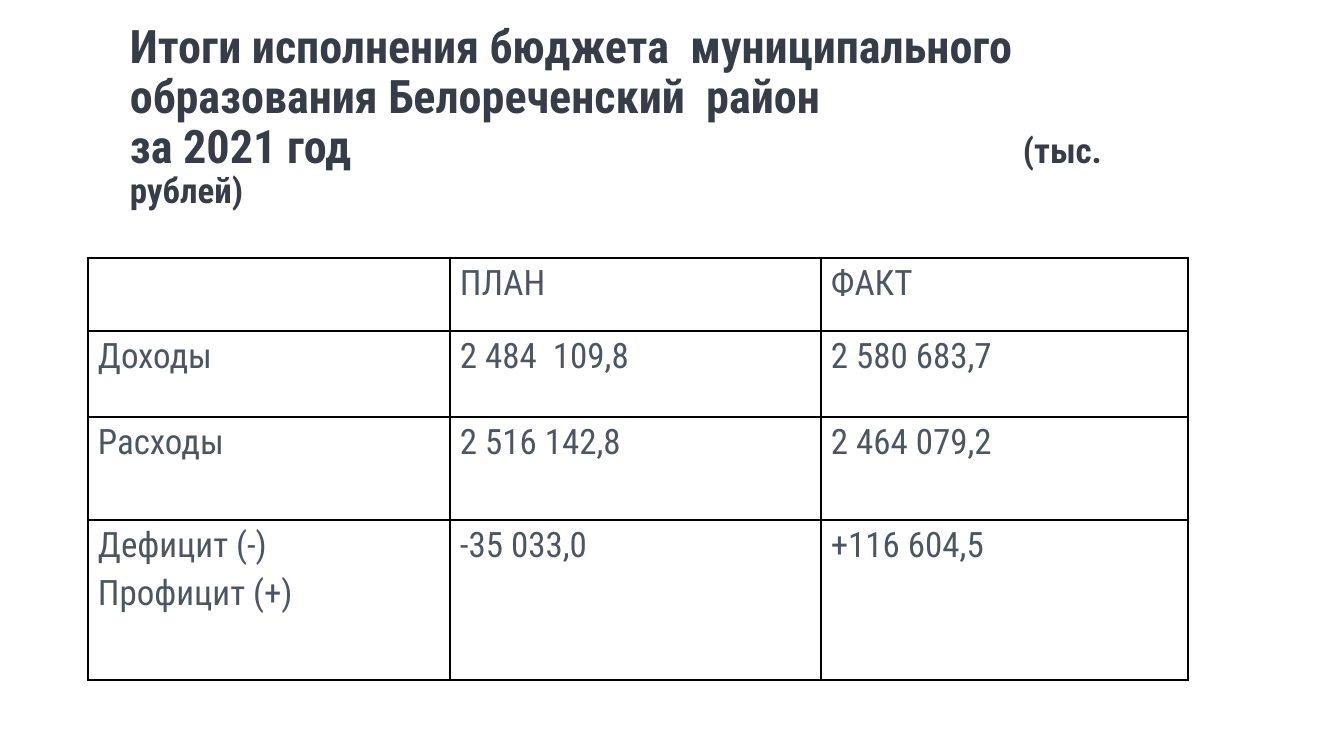
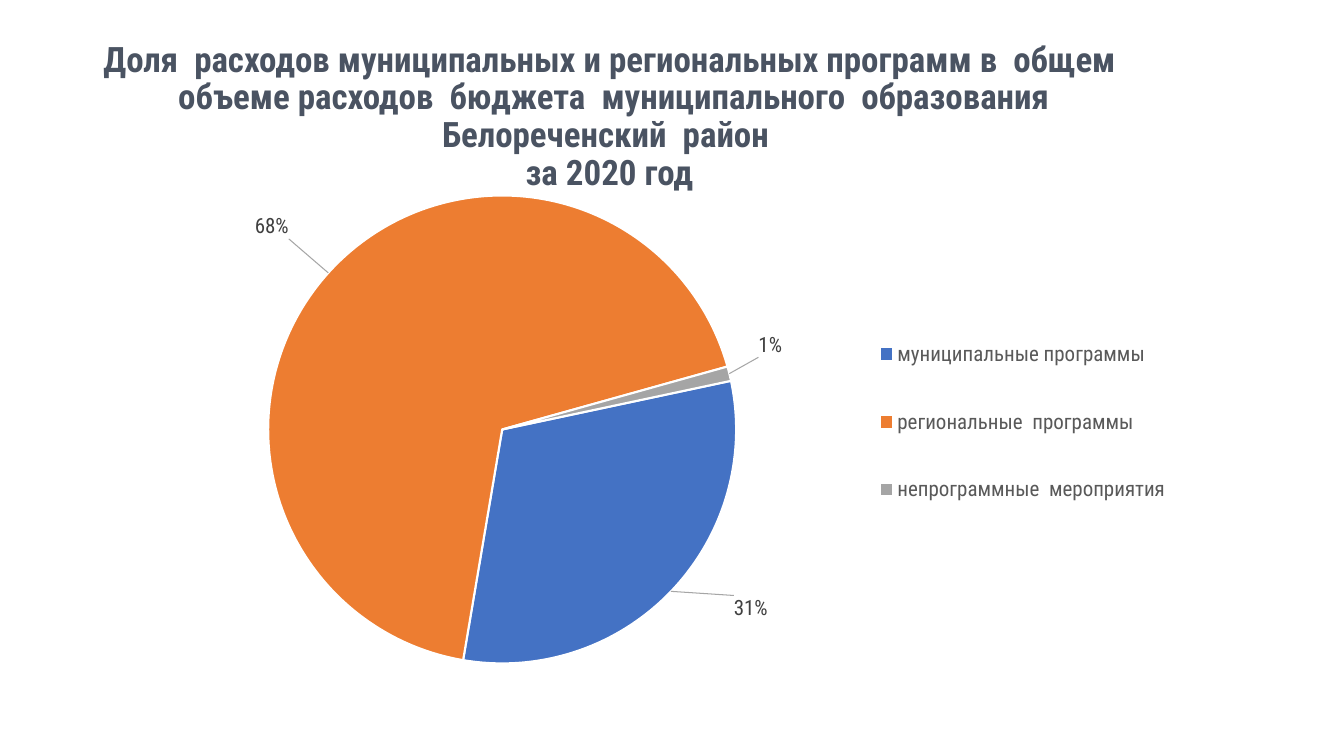
from copy import deepcopy

from pptx import Presentation
from pptx.chart.data import CategoryChartData
from pptx.dml.color import RGBColor
from pptx.enum.chart import XL_CHART_TYPE as ChartType
from pptx.enum.chart import XL_LABEL_POSITION as LabelPos
from pptx.enum.chart import XL_LEGEND_POSITION as LegendPos
from pptx.enum.text import MSO_ANCHOR as Anchor
from pptx.enum.text import PP_ALIGN as Align
from pptx.oxml import parse_xml
from pptx.oxml.ns import nsdecls, qn
from pptx.util import Pt

PX = 914400 / 100.8
FONT = "Roboto Condensed"

TITLE_DARK = RGBColor(0x36, 0x3D, 0x48)
TITLE_SLATE = RGBColor(0x4A, 0x53, 0x62)
CELL_TEXT = RGBColor(0x4C, 0x56, 0x62)
LABEL_TEXT = RGBColor(0x40, 0x40, 0x40)
LEGEND_TEXT = RGBColor(0x59, 0x59, 0x59)
BORDER = RGBColor(0x00, 0x00, 0x00)
LEADER = RGBColor(0xA6, 0xA6, 0xA6)
WHITE = RGBColor(0xFF, 0xFF, 0xFF)
BLUE = RGBColor(0x44, 0x72, 0xC4)
ORANGE = RGBColor(0xED, 0x7D, 0x31)
GRAY = RGBColor(0xA5, 0xA5, 0xA5)

TITLE_TOP, TITLE_HEIGHT = 42, 151
OUTER_PT, INNER_PT = 2.25, 1

BUDGET_ROWS = [
    ["", "ПЛАН", "ФАКТ"],
    ["Доходы", "2 484  109,8", "2 580 683,7"],
    ["Расходы", "2 516 142,8", "2 464 079,2"],
    ["Дефицит (-)\nПрофицит (+)", "-35 033,0", "+116 604,5"],
]
# category, share in percent, colour, label shift as a fraction of the chart
SHARES = [
    ("муниципальные программы", 31, BLUE, (0.05, 0)),
    ("региональные  программы", 68, ORANGE, (-0.03, -0.06)),
    ("непрограммные  мероприятия", 1, GRAY, (0.02, -0.03)),
]


def px(n):
    return round(n * PX)


def style_font(font, size, color, bold=False):
    values = {"name": FONT, "size": Pt(size), "bold": bold}
    for name, value in values.items():
        setattr(font, name, value)
    font.color.rgb = color


def add_title(slide, left, width, lines, color, align=Align.LEFT, tab=None):
    """Add a title; each line is a list of (text, size) runs."""
    tf = slide.shapes.add_textbox(
        px(left), px(TITLE_TOP), px(width), px(TITLE_HEIGHT)).text_frame
    tf.word_wrap = True
    tf.vertical_anchor = Anchor.MIDDLE
    p = tf.paragraphs[0]
    p.alignment = align
    p.line_spacing = 0.9
    if tab:
        p._p.get_or_add_pPr().append(parse_xml(
            f'<a:tabLst {nsdecls("a")}><a:tab pos="{px(tab)}" algn="l"/></a:tabLst>'))
    for i, runs in enumerate(lines):
        if i:
            p.add_line_break()
        for text, size in runs:
            r = p.add_run()
            r.text = text
            style_font(r.font, size, color, bold=True)


def set_borders(cell, widths):
    """Draw cell borders from widths in points: left, right, top, bottom."""
    tc_pr = cell._tc.get_or_add_tcPr()
    for side, width in zip("LRTB", widths):
        tc_pr.append(parse_xml(
            f'<a:ln{side} {nsdecls("a")} w="{Pt(width)}"><a:solidFill>'
            f'<a:srgbClr val="{BORDER}"/></a:solidFill></a:ln{side}>'))


def fill_cell(cell, text):
    margins = {"margin_left": 10, "margin_right": 10,
               "margin_top": 5, "margin_bottom": 5}
    for name, value in margins.items():
        setattr(cell, name, px(value))
    cell.fill.background()
    cell.text = text
    for i, p in enumerate(cell.text_frame.paragraphs):
        if i:
            p.space_before = Pt(5)
        style_font(p.font, 25, CELL_TEXT)
        for r in p.runs:
            style_font(r.font, 25, CELL_TEXT)


def add_budget_table(slide, left, top, col_widths, row_heights):
    n_rows, n_cols = len(row_heights), len(col_widths)
    table = slide.shapes.add_table(
        n_rows, n_cols, px(left), px(top),
        px(sum(col_widths)), px(sum(row_heights))).table
    table.first_row = table.horz_banding = False
    for col, width in zip(table.columns, col_widths):
        col.width = px(width)
    for row, height in zip(table.rows, row_heights):
        row.height = px(height)
    for i, texts in enumerate(BUDGET_ROWS):
        for j, text in enumerate(texts):
            edges = (j == 0, j == n_cols - 1, i == 0, i == n_rows - 1)
            cell = table.cell(i, j)
            set_borders(cell, [OUTER_PT if e else INNER_PT for e in edges])
            fill_cell(cell, text)


def manual_layout(x, y, w=None, h=None, inner=False):
    """Return a chart layout; without w and h it is a shift of a label."""
    parts = ['<c:layoutTarget val="inner"/>'] if inner else []
    if w:
        parts += ['<c:xMode val="edge"/>', '<c:yMode val="edge"/>']
    sizes = {"x": x, "y": y, "w": w, "h": h}
    parts += [f'<c:{k} val="{v}"/>' for k, v in sizes.items() if v is not None]
    return parse_xml(f'<c:layout {nsdecls("c")}><c:manualLayout>'
                     f'{"".join(parts)}</c:manualLayout></c:layout>')


def replace_layout(parent, index, layout):
    for old in parent.findall(qn("c:layout")):
        parent.remove(old)
    parent.insert(index, layout)


def add_share_labels(series):
    """Show percentages outside the slices, joined by leader lines."""
    labels = series.data_labels
    values = {"show_percentage": True, "show_value": False,
              "number_format": "0%", "number_format_is_linked": False,
              "position": LabelPos.OUTSIDE_END}
    for name, value in values.items():
        setattr(labels, name, value)
    style_font(labels.font, 15, LABEL_TEXT)

    d_lbls = labels._element
    for old in d_lbls.findall(qn("c:showLeaderLines")):
        d_lbls.remove(old)
    shared = list(d_lbls)
    for i, (_, _, _, shift) in enumerate(SHARES):
        d_lbl = parse_xml(f'<c:dLbl {nsdecls("c")}><c:idx val="{i}"/></c:dLbl>')
        d_lbl.append(manual_layout(*shift))
        d_lbl.extend([deepcopy(el) for el in shared])
        d_lbls.insert(i, d_lbl)
    d_lbls.append(parse_xml(f'<c:showLeaderLines {nsdecls("c")} val="1"/>'))
    d_lbls.append(parse_xml(
        f'<c:leaderLines {nsdecls("c", "a")}><c:spPr><a:ln w="{Pt(0.75)}">'
        f'<a:solidFill><a:srgbClr val="{LEADER}"/></a:solidFill></a:ln>'
        '</c:spPr></c:leaderLines>'))


def add_share_pie(slide, left, top, width, height):
    data = CategoryChartData()
    data.categories = [name for name, *_ in SHARES]
    data.add_series("Series 1", [share for _, share, *_ in SHARES])
    chart = slide.shapes.add_chart(
        ChartType.PIE, px(left), px(top), px(width), px(height), data).chart
    chart.has_title = False
    style_font(chart.font, 15, LABEL_TEXT)

    plot = chart.plots[0]
    plot.vary_by_categories = True
    pie = plot._element
    for old in pie.findall(qn("c:firstSliceAng")):
        pie.remove(old)
    pie.append(parse_xml(f'<c:firstSliceAng {nsdecls("c")} val="78"/>'))
    replace_layout(pie.getparent(), 0,
                   manual_layout(0.16, 0.03, 0.4, 0.94, inner=True))

    series = plot.series[0]
    for i, (_, _, color, _) in enumerate(SHARES):
        fmt = series.points[i].format
        fmt.fill.solid()
        fmt.fill.fore_color.rgb = color
        fmt.line.color.rgb = WHITE
        fmt.line.width = Pt(1.5)
    add_share_labels(series)

    chart.has_legend = True
    legend = chart.legend
    legend.position = LegendPos.RIGHT
    legend.include_in_layout = False
    style_font(legend.font, 15, LEGEND_TEXT)
    replace_layout(legend._element, 1, manual_layout(0.67, 0.24, 0.27, 0.49))


def build_budget_slide(slide):
    add_title(slide, 120, 1006, [
        [("Итоги исполнения бюджета  муниципального  "
          "образования Белореченский  район ", 33)],
        [("за 2021 год\t", 33), ("(тыс. рублей)", 25)],
    ], TITLE_DARK, tab=893)
    add_budget_table(slide, 88, 258, [362, 371, 367], [73, 86, 103, 160])


def build_shares_slide(slide):
    add_title(slide, 93, 1033, [
        [("Доля  расходов муниципальных и региональных программ в  общем  "
          "объеме расходов  бюджета  муниципального  образования "
          "Белореченский  район ", 25)],
        [("за 2020 год", 25)],
    ], TITLE_SLATE, Align.CENTER)
    add_share_pie(slide, 81, 179, 1170, 501)


def main():
    prs = Presentation()
    prs.slide_width, prs.slide_height = px(1344), px(756)
    for build in (build_budget_slide, build_shares_slide):
        build(prs.slides.add_slide(prs.slide_layouts[6]))
    prs.save("out.pptx")


if __name__ == "__main__":
    main()
